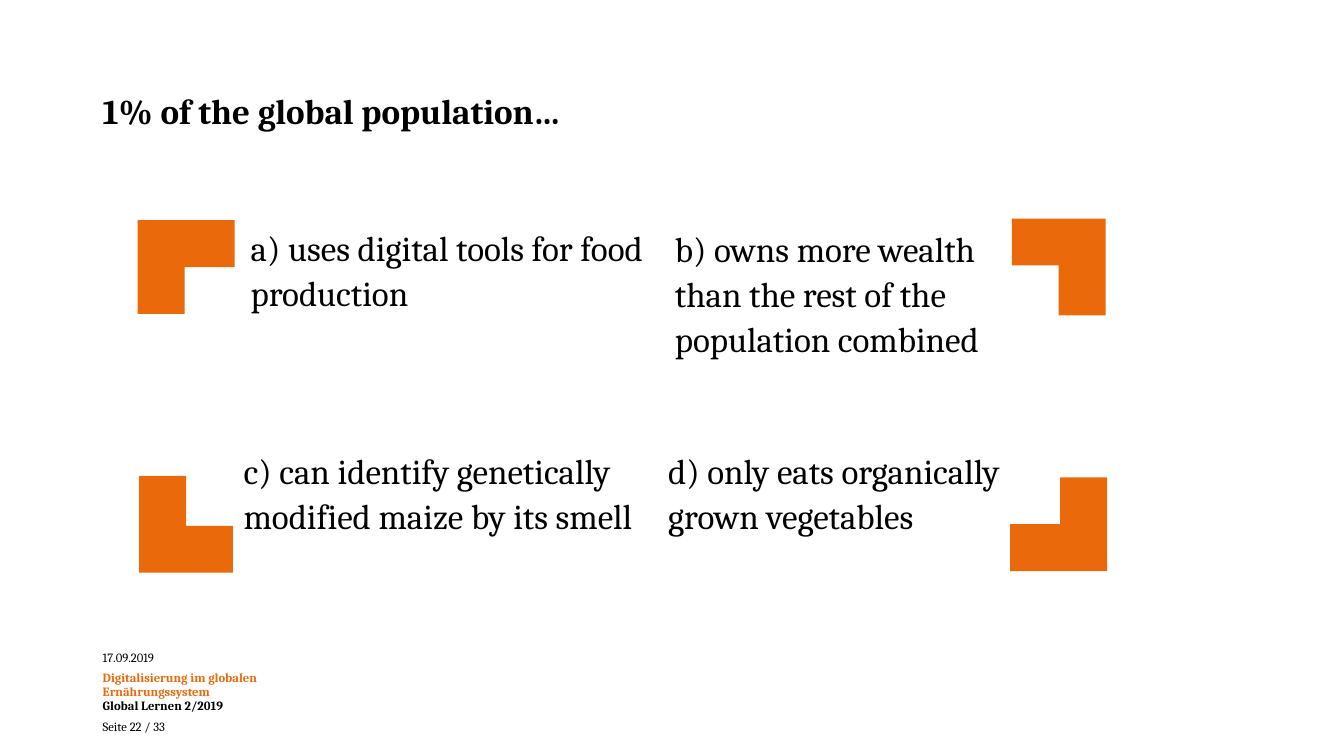
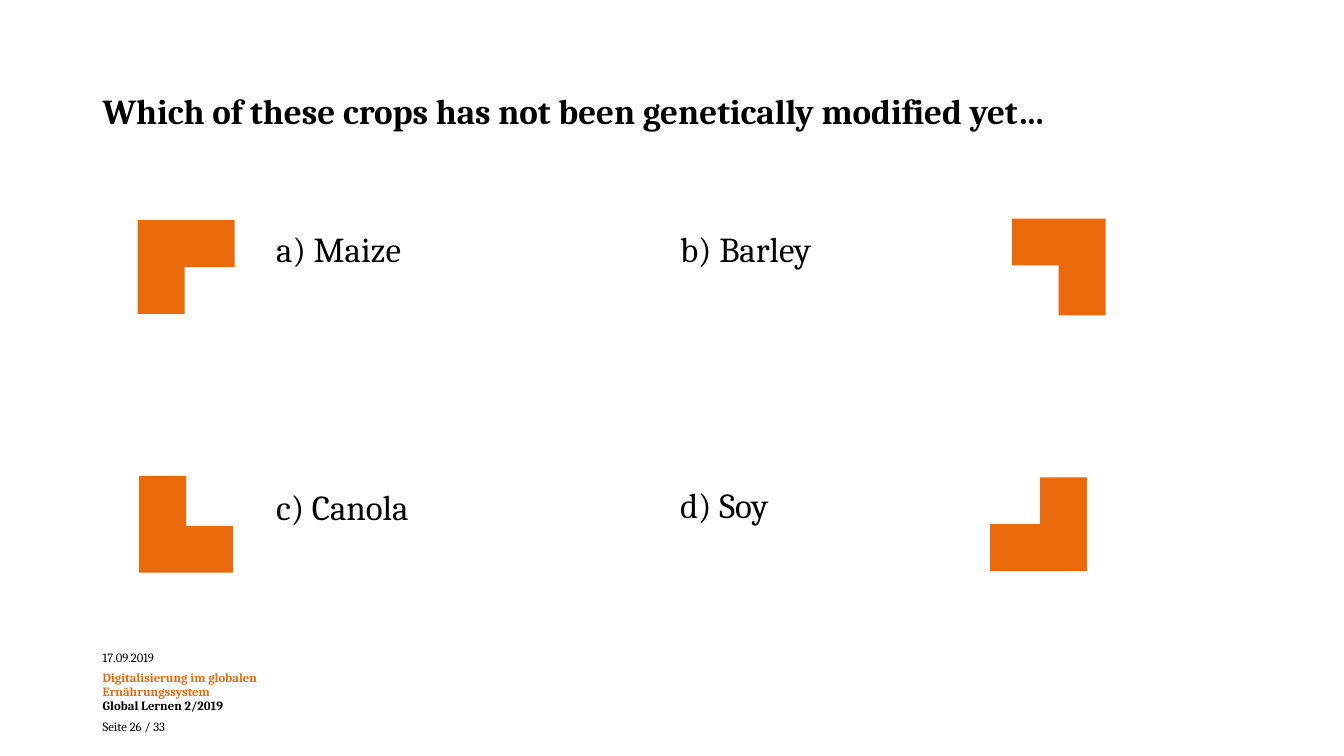
from dataclasses import dataclass

from pptx import Presentation
from pptx import util as u
from pptx.dml.color import RGBColor
from pptx.enum import shapes, text

# Content: lengths in cm; each answer is (text, left, top, width)
QUIZZES = [
    {
        "title": "1% of the global population…",
        "page": 22,
        "answers": [
            ("a) uses digital tools for food production", 6.07, 5.51, 10.69),
            ("b) owns more wealth than the rest of the population combined", 16.76, 5.54, 9.8),
            ("c) can identify genetically modified maize by its smell", 5.89, 11.13, 10.69),
            ("d) only eats organically grown vegetables", 16.59, 11.13, 9.93),
        ],
        "last_corner_left": 25.5,
    },
    {
        "title": "Which of these crops has not been genetically modified yet…",
        "page": 26,
        "answers": [
            ("a) Maize", 6.71, 5.54, 10.69),
            ("b) Barley", 16.89, 5.54, 10.69),
            ("c) Canola", 6.71, 12.04, 10.69),
            ("d) Soy", 16.89, 11.99, 10.69),
        ],
        "last_corner_left": 24.99,
    },
]
DATE = "17.09.2019"
TOPIC = "Digitalisierung im globalen Ernährungssystem"
SERIES = "Global Lernen 2/2019"
PAGE_COUNT = 33


@dataclass(frozen=True)
class Theme:
    font: str = "Cambria"
    ink: RGBColor = RGBColor(0x00, 0x00, 0x00)
    accent: RGBColor = RGBColor(0xEA, 0x69, 0x0B)
    body: int = 25
    small: int = 9


THEME = Theme()
LEFT = 2.34
CORNER_LEFTS = (3.51, 25.5)
CORNER_TOPS = (5.51, 11.99)
CORNER_SIZE = (2.36, 2.44)


def add_box(s, left, top, width, height, anchor=text.MSO_ANCHOR.TOP):
    tf = s.shapes.add_textbox(*map(u.Cm, (left, top, width, height))).text_frame
    tf.word_wrap = True
    tf.vertical_anchor = anchor
    return tf


def write(p, words, size=THEME.body, color=THEME.ink, bold=False, spacing=1.07, after=0):
    p.line_spacing = spacing
    p.space_after = u.Pt(after)
    r = p.add_run()
    r.text = words
    r.font.name = THEME.font
    r.font.size = u.Pt(size)
    r.font.color.rgb = color
    r.font.bold = bold


def add_corner(s, left, top, rotation):
    sp = s.shapes.add_shape(shapes.MSO_SHAPE.CORNER, *map(u.Cm, (left, top, *CORNER_SIZE)))
    sp.rotation = rotation
    sp.shadow.inherit = False
    sp.fill.solid()
    sp.fill.fore_color.rgb = THEME.accent
    sp.line.fill.background()


def add_footer(s, page):
    lines = [
        (DATE, {"after": 4.5}),
        (TOPIC, {"color": THEME.accent, "bold": True}),
        (SERIES, {"bold": True, "after": 4.5}),
        (f"Seite {page} / {PAGE_COUNT}", {}),
    ]
    tf = add_box(s, LEFT, 16.28, 6.6, 2.41)
    for i, (words, style) in enumerate(lines):
        p = tf.add_paragraph() if i else tf.paragraphs[0]
        write(p, words, size=THEME.small, spacing=u.Pt(10), **style)


def add_quiz(prs, quiz):
    s = prs.slides.add_slide(prs.slide_layouts[6])
    add_footer(s, quiz["page"])

    # Title
    tf = add_box(s, LEFT, 1.02, 29.21, 3.68, text.MSO_ANCHOR.MIDDLE)
    write(tf.paragraphs[0], quiz["title"], bold=True, spacing=0.9)

    # Corners frame the four answers
    (x1, x2), (y1, y2) = CORNER_LEFTS, CORNER_TOPS
    for corner in ((x1, y1, 90), (x2, y1, 180), (x1, y2, 0),
                   (quiz["last_corner_left"], y2, 270)):
        add_corner(s, *corner)

    # Answers
    for words, left, top, width in quiz["answers"]:
        write(add_box(s, left, top, width, 3.3).paragraphs[0], words)


def main():
    prs = Presentation()
    prs.slide_width, prs.slide_height = u.Cm(33.87), u.Cm(19.05)
    for quiz in QUIZZES:
        add_quiz(prs, quiz)
    prs.save("out.pptx")


if __name__ == "__main__":
    main()
